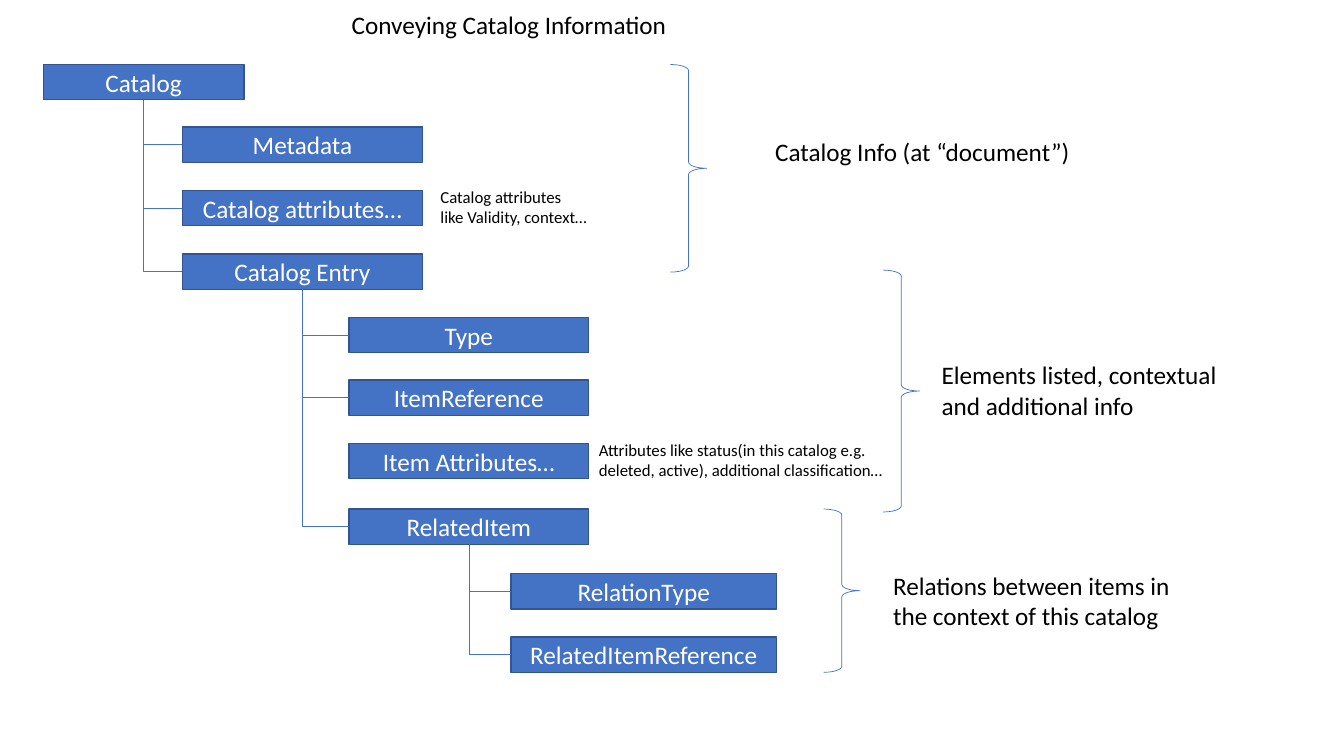
from dataclasses import dataclass

import pptx
import pptx.dml.color
import pptx.enum.shapes
import pptx.enum.text
import pptx.oxml
import pptx.util
from pptx.util import Inches

FONT = "Calibri"
BLUE, DARK_BLUE, WHITE, BLACK = "4472C4", "325491", "FFFFFF", "000000"
BOX_HEIGHT = 0.35


@dataclass
class Box:
    text: str
    left: float
    top: float
    width: float = 2.38
    parent: str = ""


@dataclass
class Brace:
    left: float
    top: float
    height: float


@dataclass
class Label:
    lines: list[str]
    left: float
    top: float
    width: float
    height: float
    size: int = 18


BOXES = [
    Box("Catalog", 0.43, 0.64, 1.99),
    Box("Metadata", 1.81, 1.26, parent="Catalog"),
    Box("Catalog attributes…", 1.81, 1.89, parent="Catalog"),
    Box("Catalog Entry", 1.81, 2.52, parent="Catalog"),
    Box("Type", 3.46, 3.15, parent="Catalog Entry"),
    Box("ItemReference", 3.46, 3.77, parent="Catalog Entry"),
    Box("Item Attributes…", 3.46, 4.4),
    Box("RelatedItem", 3.46, 5.05, parent="Catalog Entry"),
    Box("RelationType", 5.07, 5.69, 2.63, "RelatedItem"),
    Box("RelatedItemReference", 5.07, 6.32, 2.63, "RelatedItem"),
]

BRACES = [Brace(6.65, 0.64, 2.06), Brace(8.76, 2.68, 2.4), Brace(8.17, 5.05, 1.62)]

LABELS = [
    Label(["Conveying Catalog Information"], 3.39, 0.04, 3.36, 0.4),
    Label(["Catalog attributes", "like Validity, context…"], 4.27, 1.8, 1.67, 0.5, 12),
    Label(["Attributes like status(in this catalog e.g.",
           "deleted, active), additional classification…"], 5.84, 4.31, 3.05, 0.5, 12),
    Label(["Catalog Info (at “document”)"], 7.59, 1.3, 3.16, 0.4),
    Label(["Elements listed, contextual", "and additional info"], 9.24, 3.52, 3.02, 0.71),
    Label(["Relations between items in", "the context of this catalog"], 8.76, 5.61, 3.04, 0.71),
]


def rgb(color: str) -> pptx.dml.color.RGBColor:
    return pptx.dml.color.RGBColor.from_string(color)


def set_line(line, color: str, width: float) -> None:
    line.color.rgb = rgb(color)
    line.width = pptx.util.Pt(width)


def format_runs(tf, size: int, color: str) -> None:
    for p in tf.paragraphs:
        for r in p.runs:
            r.font.name = FONT
            r.font.size = pptx.util.Pt(size)
            r.font.color.rgb = rgb(color)


def add_box(s, box: Box):
    sp = s.shapes.add_shape(pptx.enum.shapes.MSO_SHAPE.RECTANGLE, Inches(box.left),
                            Inches(box.top), Inches(box.width), Inches(BOX_HEIGHT))
    sp.shadow.inherit = False
    sp.fill.solid()
    sp.fill.fore_color.rgb = rgb(BLUE)
    set_line(sp.line, DARK_BLUE, 1)
    tf = sp.text_frame
    tf.text = box.text
    tf.vertical_anchor = pptx.enum.text.MSO_ANCHOR.MIDDLE
    tf.paragraphs[0].alignment = pptx.enum.text.PP_ALIGN.CENTER
    format_runs(tf, 18, WHITE)
    return sp


def add_branch(s, parent, child) -> None:
    """Draw an elbow from the parent's bottom middle to the child's left middle."""
    c = s.shapes.add_connector(pptx.enum.shapes.MSO_CONNECTOR.ELBOW, 0, 0, 0, 0)
    c.begin_connect(parent, 2)
    c.end_connect(child, 1)
    x1, y1 = parent.left + parent.width // 2, parent.top + parent.height
    x2, y2 = child.left, child.top + child.height // 2
    # A single-bend elbow is stored turned by 270 degrees about its centre
    c.width, c.height = y2 - y1, x2 - x1
    c.left = (x1 + x2 - c.width) // 2
    c.top = (y1 + y2 - c.height) // 2
    sp_pr = c._element.spPr
    sp_pr.xfrm.set("rot", "16200000")
    sp_pr.xfrm.set("flipH", "1")
    sp_pr.prstGeom.set("prst", "bentConnector2")
    set_line(c.line, BLUE, 0.5)
    sp_pr.append(pptx.oxml.parse_xml(
        '<a:effectLst xmlns:a="http://schemas.openxmlformats.org/drawingml/2006/main"/>'))


def add_brace(s, brace: Brace) -> None:
    sp = s.shapes.add_shape(pptx.enum.shapes.MSO_SHAPE.RIGHT_BRACE, Inches(brace.left),
                            Inches(brace.top), Inches(0.36), Inches(brace.height))
    sp.adjustments[0] = 0.17
    sp.shadow.inherit = False
    sp.fill.background()
    set_line(sp.line, BLUE, 0.5)


def add_label(s, label: Label) -> None:
    sp = s.shapes.add_textbox(Inches(label.left), Inches(label.top),
                              Inches(label.width), Inches(label.height))
    tf = sp.text_frame
    tf.text = "\n".join(label.lines)
    tf.word_wrap = False
    tf.auto_size = pptx.enum.text.MSO_AUTO_SIZE.SHAPE_TO_FIT_TEXT
    format_runs(tf, label.size, BLACK)


def main() -> None:
    prs = pptx.Presentation()
    prs.slide_width, prs.slide_height = Inches(13.33), Inches(7.5)
    s = prs.slides.add_slide(prs.slide_layouts[6])

    # Catalog tree
    shapes = {box.text: add_box(s, box) for box in BOXES}
    for box in BOXES:
        if box.parent:
            add_branch(s, shapes[box.parent], shapes[box.text])

    # Braces and explanations
    for brace in BRACES:
        add_brace(s, brace)
    for label in LABELS:
        add_label(s, label)

    prs.save("out.pptx")


if __name__ == "__main__":
    main()
